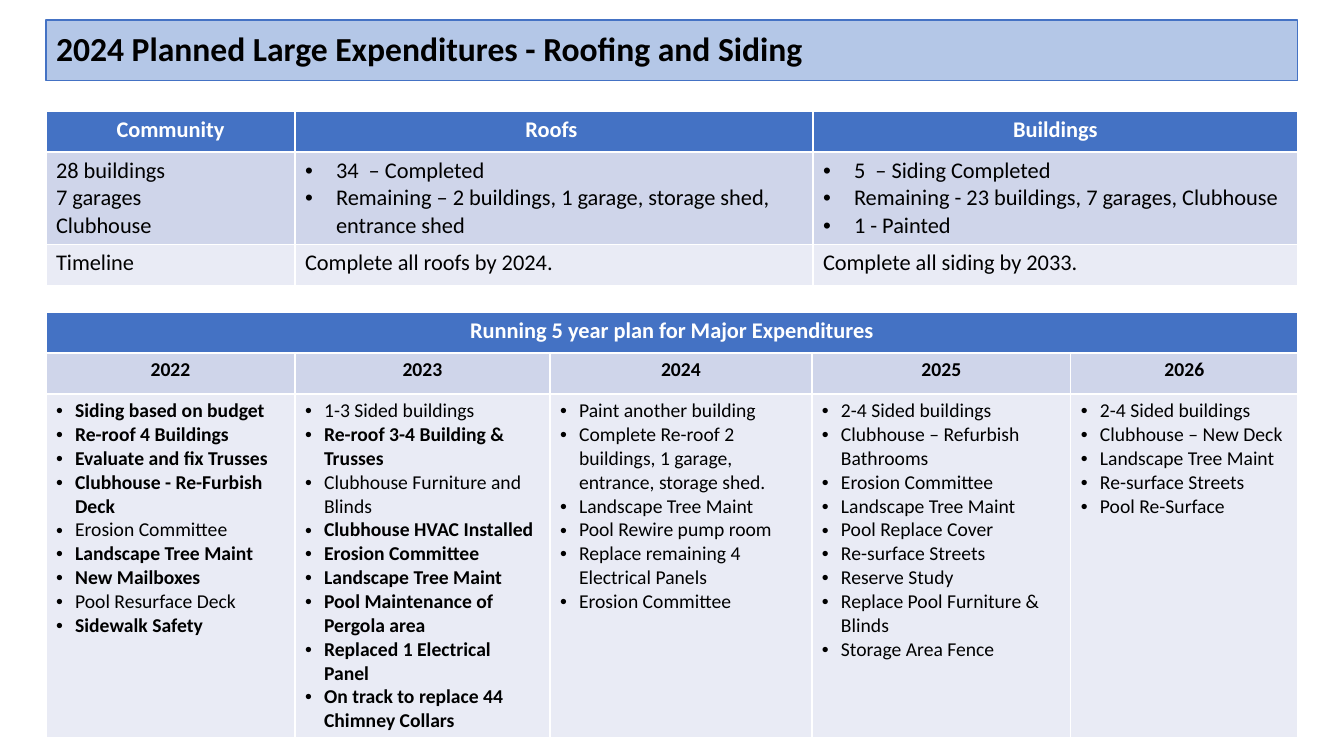
from dataclasses import dataclass

from lxml import etree
from pptx import Presentation
from pptx import util as u
from pptx.dml.color import RGBColor
from pptx.enum import text
from pptx.oxml import ns

EMU_PER_PX = 914400 / 100.8
LEFT, WIDTH = 46, 1252
TITLE_ONLY = 5


@dataclass(frozen=True)
class Theme:
    font: str = "Calibri"
    ink: str = "000000"
    white: str = "FFFFFF"
    accent: str = "4472C4"
    banner: str = "B4C7E7"
    dark_band: str = "CFD5EA"
    light_band: str = "E9EBF5"
    title_size: int = 24
    status_size: int = 16
    plan_size: int = 14
    title_line: float = 0.75


THEME = Theme()

STATUS_HEADINGS = ["Community", "Roofs ", "Buildings"]
COMMUNITY = ["28 buildings", "7 garages", "Clubhouse"]
ROOFS = [
    "34  – Completed",
    "Remaining – 2 buildings, 1 garage, storage shed, entrance shed",
]
BUILDINGS = [
    "5  – Siding Completed",
    "Remaining - 23 buildings, 7 garages, Clubhouse",
    "1 - Painted",
]
TIMELINE = ["Timeline", "Complete all roofs by 2024.", "Complete all siding by 2033."]

PLAN_HEADING = "Running 5 year plan for Major Expenditures"
PLAN = {
    "2022": [
        "Siding based on budget",
        "Re-roof 4 Buildings",
        "Evaluate and fix Trusses",
        "Clubhouse - Re-Furbish Deck",
        "Erosion Committee",
        "Landscape Tree Maint",
        "New Mailboxes",
        "Pool Resurface Deck",
        "Sidewalk Safety",
    ],
    "2023": [
        "1-3 Sided buildings",
        "Re-roof 3-4 Building & Trusses",
        "Clubhouse Furniture and Blinds",
        "Clubhouse HVAC Installed",
        "Erosion Committee",
        "Landscape Tree Maint",
        "Pool Maintenance of Pergola area",
        "Replaced 1 Electrical Panel",
        "On track to replace 44 Chimney Collars",
    ],
    "2024": [
        "Paint another building",
        "Complete Re-roof 2 buildings, 1 garage, entrance, storage shed.",
        "Landscape Tree Maint",
        "Pool Rewire pump room",
        "Replace remaining 4 Electrical Panels",
        "Erosion Committee",
    ],
    "2025": [
        "2-4 Sided buildings",
        "Clubhouse – Refurbish Bathrooms",
        "Erosion Committee",
        "Landscape Tree Maint",
        "Pool Replace Cover",
        "Re-surface Streets",
        "Reserve Study",
        "Replace Pool Furniture & Blinds",
        "Storage Area Fence",
    ],
    "2026": [
        "2-4 Sided buildings",
        "Clubhouse – New Deck",
        "Landscape Tree Maint",
        "Re-surface Streets",
        "Pool Re-Surface",
    ],
}
REGULAR_ITEMS = {
    "2022": {"Erosion Committee", "Pool Resurface Deck"},
    "2023": {"1-3 Sided buildings", "Clubhouse Furniture and Blinds"},
}


def px(length):
    return u.Emu(round(length * EMU_PER_PX))


def rgb(color):
    return RGBColor.from_string(color)


def add_bullet(paragraph, indent):
    properties = paragraph._p.get_or_add_pPr()
    properties.set("marL", str(px(indent)))
    properties.set("indent", str(-px(indent)))
    etree.SubElement(properties, ns.qn("a:buFont"), typeface="Arial")
    etree.SubElement(properties, ns.qn("a:buChar"), char="•")


def write(frame, lines, *, size, color=THEME.ink, bold=False, align=None,
          bullet_indent=0, regular=()):
    for index, line in enumerate(lines):
        paragraph = frame.paragraphs[0] if index == 0 else frame.add_paragraph()
        paragraph.alignment = align
        if bullet_indent:
            add_bullet(paragraph, bullet_indent)
        run = paragraph.add_run()
        run.text = line
        run.font.name = THEME.font
        run.font.size = u.Pt(size)
        run.font.bold = bold and line not in regular
        run.font.color.rgb = rgb(color)


def fill_cell(cell, lines, fill, **text_format):
    cell.fill.solid()
    cell.fill.fore_color.rgb = rgb(fill)
    write(cell.text_frame, lines, **text_format)


def fill_heading(cell, heading):
    fill_cell(cell, [heading], THEME.accent, size=THEME.status_size,
              color=THEME.white, bold=True, align=text.PP_ALIGN.CENTER)


def add_table(slide, top, column_widths, row_heights):
    table = slide.shapes.add_table(
        len(row_heights), len(column_widths),
        px(LEFT), px(top), px(WIDTH), px(sum(row_heights))).table
    for column, width in zip(table.columns, column_widths):
        column.width = px(width)
    for row, height in zip(table.rows, row_heights):
        row.height = px(height)
    return table


def add_title(slide, title):
    shape = slide.shapes.title
    shape.left, shape.top, shape.width, shape.height = map(px, (LEFT, 20, WIDTH, 61))
    shape.fill.solid()
    shape.fill.fore_color.rgb = rgb(THEME.banner)
    shape.line.color.rgb = rgb(THEME.accent)
    shape.line.width = u.Pt(THEME.title_line)
    frame = shape.text_frame
    frame.auto_size = text.MSO_AUTO_SIZE.NONE
    frame.vertical_anchor = text.MSO_ANCHOR.MIDDLE
    write(frame, [title], size=THEME.title_size, bold=True, align=text.PP_ALIGN.LEFT)
    frame.paragraphs[0].line_spacing = 0.9


def add_status_table(slide):
    table = add_table(slide, 111, [249, 518, 485], [41, 91, 41])
    for column, heading in enumerate(STATUS_HEADINGS):
        fill_heading(table.cell(0, column), heading)
    for column, lines in enumerate([COMMUNITY, ROOFS, BUILDINGS]):
        fill_cell(table.cell(1, column), lines, THEME.dark_band,
                  size=THEME.status_size, bullet_indent=31 if column else 0)
    for column, line in enumerate(TIMELINE):
        fill_cell(table.cell(2, column), [line], THEME.light_band,
                  size=THEME.status_size)


def add_plan_table(slide):
    table = add_table(slide, 312, [249, 255, 262, 259, 227], [41, 41, 344])
    table.cell(0, 0).merge(table.cell(0, len(PLAN) - 1))
    fill_heading(table.cell(0, 0), PLAN_HEADING)
    for column, (year, items) in enumerate(PLAN.items()):
        fill_cell(table.cell(1, column), [year], THEME.dark_band,
                  size=THEME.plan_size, bold=True, align=text.PP_ALIGN.CENTER)
        fill_cell(table.cell(2, column), items, THEME.light_band,
                  size=THEME.plan_size, bullet_indent=19,
                  bold=year in REGULAR_ITEMS, regular=REGULAR_ITEMS.get(year, ()))


def main():
    presentation = Presentation()
    presentation.slide_width, presentation.slide_height = px(1344), px(756)
    slide = presentation.slides.add_slide(presentation.slide_layouts[TITLE_ONLY])
    add_title(slide, "2024 Planned Large Expenditures - Roofing and Siding")
    add_status_table(slide)
    add_plan_table(slide)
    presentation.save("out.pptx")


if __name__ == "__main__":
    main()
